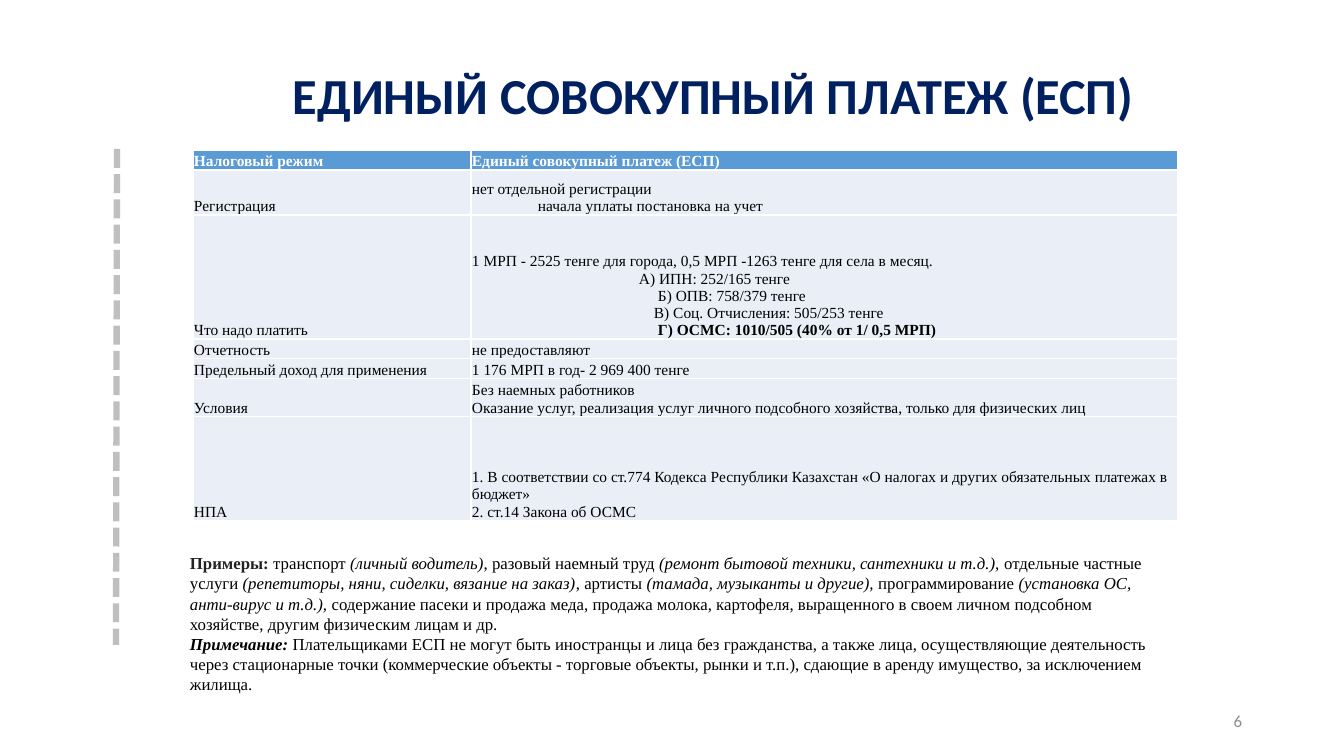
from lxml import etree
from pptx import Presentation
from pptx.dml.color import RGBColor
from pptx.enum.dml import MSO_LINE
from pptx.enum.shapes import MSO_CONNECTOR
from pptx.enum.text import MSO_ANCHOR, PP_ALIGN
from pptx.oxml import parse_xml
from pptx.oxml.ns import nsdecls, qn
from pptx.util import Emu, Pt

PX = 914400 / 100.8
COLORS = {
    "title": "002060", "header": "5B9BD5", "row": "EAEFF7", "white": "FFFFFF",
    "text": "000000", "examples": "222222", "dashes": "BFBFBF", "number": "8C8C8C",
}
SERIF = "Times New Roman"


def px(*lengths):
    return [Emu(round(length * PX)) for length in lengths]


def write(paragraph, parts, size, font, color):
    for text, style in parts:
        run = paragraph.add_run()
        run.text = text
        run.font.size = Pt(size)
        run.font.name = font
        run.font.bold = "b" in style
        run.font.italic = "i" in style
        run.font.color.rgb = RGBColor.from_string(COLORS[color])


deck = Presentation()
deck.slide_width, deck.slide_height = px(1344, 756)
slide = deck.slides.add_slide(deck.slide_layouts[6])

number = slide.shapes.add_textbox(*px(950, 701, 302, 40)).text_frame
number.word_wrap = True
number.vertical_anchor = MSO_ANCHOR.MIDDLE
number.paragraphs[0].alignment = PP_ALIGN.RIGHT
write(number.paragraphs[0], [("6", "")], 12, "Calibri", "number")

title = slide.shapes.add_textbox(*px(283, 59, 879, 72)).text_frame
title.word_wrap = True
write(title.paragraphs[0], [("ЕДИНЫЙ СОВОКУПНЫЙ ПЛАТЕЖ (ЕСП)", "b")], 36, "Calibri", "title")

regime_rows = [
    (20, "Налоговый режим", [("Единый совокупный платеж (ЕСП)", 0, "b")]),
    (45, "Регистрация", [
        ("нет отдельной регистрации", 0, ""),
        ("начала уплаты постановка на учет", 66, ""),
    ]),
    (124, "Что надо платить", [
        ("1 МРП - 2525 тенге для города, 0,5 МРП -1263 тенге для села в месяц.", 0, ""),
        ("А) ИПН: 252/165 тенге", 167, ""),
        ("Б) ОПВ: 758/379 тенге", 186, ""),
        ("В) Соц. Отчисления: 505/253 тенге", 182, ""),
        ("Г) ОСМС: 1010/505 (40% от 1/ 0,5 МРП)", 186, "b"),
    ]),
    (20, "Отчетность", [("не предоставляют", 0, "")]),
    (19, "Предельный доход для применения", [("1 176 МРП в год- 2 969 400 тенге", 0, "")]),
    (38, "Условия", [
        ("Без наемных работников", 0, ""),
        ("Оказание услуг, реализация услуг личного подсобного хозяйства, "
         "только для физических лиц", 0, ""),
    ]),
    (104, "НПА", [
        ("1. В соответствии со ст.774 Кодекса Республики Казахстан "
         "«О налогах и других обязательных платежах в бюджет»", 0, ""),
        ("2. ст.14 Закона об ОСМС", 0, ""),
    ]),
]
regime = slide.shapes.add_table(len(regime_rows), 2, *px(193, 150, 985, 370)).table
regime.columns[0].width, regime.columns[1].width = px(278, 707)

for row_index, (height, label, details) in enumerate(regime_rows):
    regime.rows[row_index].height = px(height)[0]
    is_header = row_index == 0
    label_line = [(label, 0, "b" if is_header else "")]
    for column, lines in enumerate([label_line, details]):
        cell = regime.cell(row_index, column)
        cell.vertical_anchor = MSO_ANCHOR.BOTTOM
        cell.margin_left, cell.margin_right, cell.margin_top, cell.margin_bottom = px(1, 1, 1, 0)
        cell.fill.solid()
        cell.fill.fore_color.rgb = RGBColor.from_string(COLORS["header" if is_header else "row"])
        for position, side in enumerate(["lnL", "lnR", "lnT", "lnB"]):
            border = parse_xml(
                f'<a:{side} {nsdecls("a")} w="12700"><a:solidFill>'
                f'<a:srgbClr val="{COLORS["white"]}"/></a:solidFill></a:{side}>')
            cell._tc.get_or_add_tcPr().insert(position, border)
        for line_index, (text, indent, style) in enumerate(lines):
            frame = cell.text_frame
            paragraph = frame.add_paragraph() if line_index else frame.paragraphs[0]
            if indent:
                paragraph._p.get_or_add_pPr().set("marL", str(px(indent)[0]))
            write(paragraph, [(text, style)], 11, SERIF, "white" if is_header else "text")

dashes = slide.shapes.add_connector(MSO_CONNECTOR.STRAIGHT, *px(117, 149, 116, 645))
dashes.line.color.rgb = RGBColor.from_string(COLORS["dashes"])
dashes.line.width = Pt(4.5)
dashes.line.dash_style = MSO_LINE.SQUARE_DOT
etree.SubElement(dashes._element.spPr, qn("a:effectLst"))

comments = slide.shapes.add_textbox(*px(180, 548, 994, 190)).text_frame
comments.word_wrap = True
examples = comments.paragraphs[0]
write(examples, [("Примеры: ", "b")], 12, SERIF, "examples")
write(examples, [
    ("транспорт ", ""),
    ("(личный водитель)", "i"),
    (", разовый наемный труд ", ""),
    ("(ремонт бытовой техники, сантехники и т.д.), ", "i"),
    ("отдельные частные услуги ", ""),
    ("(репетиторы, няни, сиделки, вязание на заказ)", "i"),
    (", артисты ", ""),
    ("(тамада, музыканты и другие), ", "i"),
    ("программирование ", ""),
    ("(установка ОС, анти-вирус и т.д.), ", "i"),
    ("содержание пасеки и продажа меда, продажа молока, картофеля, выращенного "
     "в своем личном подсобном хозяйстве, другим физическим лицам и др.", ""),
], 12, SERIF, "text")
write(comments.add_paragraph(), [
    ("Примечание: ", "bi"),
    ("Плательщиками ЕСП не могут быть иностранцы и лица без гражданства, а также лица, "
     "осуществляющие деятельность через стационарные точки (коммерческие объекты - "
     "торговые объекты, рынки и т.п.), сдающие в аренду имущество, за исключением жилища.", ""),
], 12, SERIF, "text")

deck.save("out.pptx")
